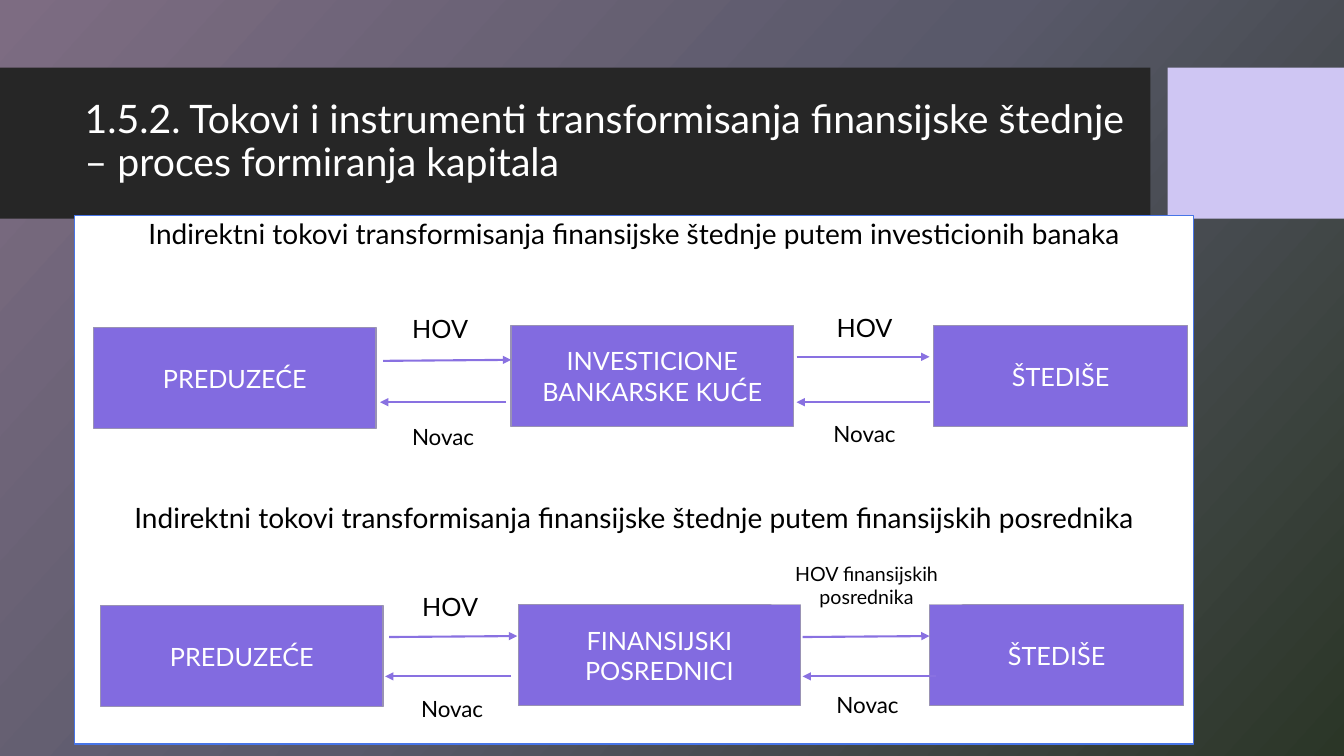
from copy import deepcopy

from pptx import Presentation
from pptx import util as u
from pptx.dml.color import RGBColor
from pptx.enum import shapes, text
from pptx.oxml.ns import qn
from pptx.oxml.xmlchemy import OxmlElement

PX = u.Inches(0.01)


def rgb(value):
    return RGBColor.from_string(value)


class Deck:
    font = "Lato"
    white, black = "FFFFFF", "000000"
    box_fill, box_line, arrow_line = "826BE0", "9992B4", "8971E1"

    def __init__(self, width, height):
        self.prs = Presentation()
        self.prs.slide_width, self.prs.slide_height = width * PX, height * PX
        self.s = self.prs.slides.add_slide(self.prs.slide_layouts[5])

    def background(self, stops, angle):
        fill = self.s.background.fill
        fill.gradient()
        fill.gradient_angle = 360 - angle
        gs_list = self.s.element.find(".//" + qn("a:gsLst"))
        while len(gs_list) < len(stops):
            gs_list.append(deepcopy(gs_list[-1]))
        for stop, (position, color) in zip(fill.gradient_stops, stops):
            stop.position = position
            stop.color.rgb = rgb(color)

    def set_text(self, sp, content, size, color, align=text.PP_ALIGN.CENTER,
                 anchor=text.MSO_ANCHOR.MIDDLE, spacing=1.0):
        tf = sp.text_frame
        tf.text = content
        tf.word_wrap = True
        tf.auto_size = text.MSO_AUTO_SIZE.NONE
        tf.vertical_anchor = anchor
        for p in tf.paragraphs:
            p.alignment = align
            p.line_spacing = spacing
            for r in p.runs:
                r.font.name = self.font
                r.font.size = u.Pt(size)
                r.font.color.rgb = rgb(color)
        return tf

    def shape(self, x, y, w, h, fill, line=None, kind=shapes.MSO_SHAPE.RECTANGLE):
        sp = self.s.shapes.add_shape(kind, x * PX, y * PX, w * PX, h * PX)
        sp.shadow.inherit = False
        sp.fill.solid()
        sp.fill.fore_color.rgb = rgb(fill)
        if line:
            sp.line.color.rgb = rgb(line)
            sp.line.width = u.Pt(1)
        else:
            sp.line.fill.background()
        return sp

    def band(self, x, y, w, h, fill):
        sp = self.shape(x, y, w, h, fill)
        self.s.shapes.title.element.addprevious(sp.element)

    def title(self, x, y, w, h, content):
        sp = self.s.shapes.title
        sp.left, sp.top, sp.width, sp.height = x * PX, y * PX, w * PX, h * PX
        self.set_text(sp, content, 28, self.white, text.PP_ALIGN.LEFT, spacing=0.9)

    def panel(self, x, y, w, h, headings, gap):
        sp = self.shape(x, y, w, h, self.white, "4775E7")
        tf = self.set_text(sp, "\n".join(headings), 20, self.black,
                           anchor=text.MSO_ANCHOR.TOP, spacing=0.9)
        for p in tf.paragraphs[1:]:
            p.space_before = u.Pt(gap)

    def box(self, x, y, w, content):
        sp = self.shape(x, y, w, 100, self.box_fill, self.box_line)
        self.set_text(sp, content, 18, self.white)

    def label(self, x, y, w, h, content, size):
        sp = self.shape(x, y, w, h, self.white, self.white,
                        shapes.MSO_SHAPE.ROUNDED_RECTANGLE)
        self.set_text(sp, content, size, self.black)

    def arrow(self, x1, y1, x2, y2):
        c = self.s.shapes.add_connector(shapes.MSO_CONNECTOR.STRAIGHT,
                                        x1 * PX, y1 * PX, x2 * PX, y2 * PX)
        c.line.color.rgb = rgb(self.arrow_line)
        c.line.width = u.Pt(1.5)
        tail = OxmlElement("a:tailEnd")
        tail.set("type", "triangle")
        c.element.spPr.find(qn("a:ln")).append(tail)
        c.element.spPr.append(OxmlElement("a:effectLst"))


def main():
    deck = Deck(1333, 750)
    deck.background([(0, "7D6C82"), (0.5, "59596A"), (1, "2B3627")], 42)
    deck.band(0, 67, 1141, 150, "262626")
    deck.band(1158, 67, 175, 150, "CFC6F3")
    deck.title(74, 82, 1051, 118, "1.5.2. Tokovi i instrumenti transformisanja "
               "finansijske štednje – proces formiranja kapitala")
    heading = "Indirektni tokovi transformisanja finansijske štednje putem "
    deck.panel(74, 214, 1110, 524,
               [heading + "investicionih banaka", heading + "finansijskih posrednika"], 181)

    boxes = [
        (93, 325, 280, "PREDUZEĆE"),
        (507, 323, 280, "INVESTICIONE BANKARSKE KUĆE"),
        (926, 323, 252, "ŠTEDIŠE"),
        (100, 601, 280, "PREDUZEĆЕ"),
        (514, 600, 280, "FINANSIJSKI POSREDNICI"),
        (922, 600, 252, "ŠTEDIŠЕ"),
    ]
    arrows = [
        (380, 358, 507, 357), (790, 354, 922, 354),
        (502, 399, 377, 399), (922, 399, 790, 399),
        (386, 632, 513, 631), (796, 632, 922, 631),
        (507, 671, 382, 671), (928, 671, 796, 671),
    ]
    securities = [(392, 308), (813, 307), (402, 584)]
    money = [(392, 409), (810, 406), (401, 678), (813, 674)]

    for box in boxes:
        deck.box(*box)
    for arrow in arrows:
        deck.arrow(*arrow)
    for x, y in securities:
        deck.label(x, y, 89, 36, "HOV", 18)
    deck.label(760, 562, 199, 37, "HOV finansijskih posrednika", 14)
    for x, y in money:
        deck.label(x, y, 95, 49, "Novac", 16)
    deck.prs.save("out.pptx")


if __name__ == "__main__":
    main()
